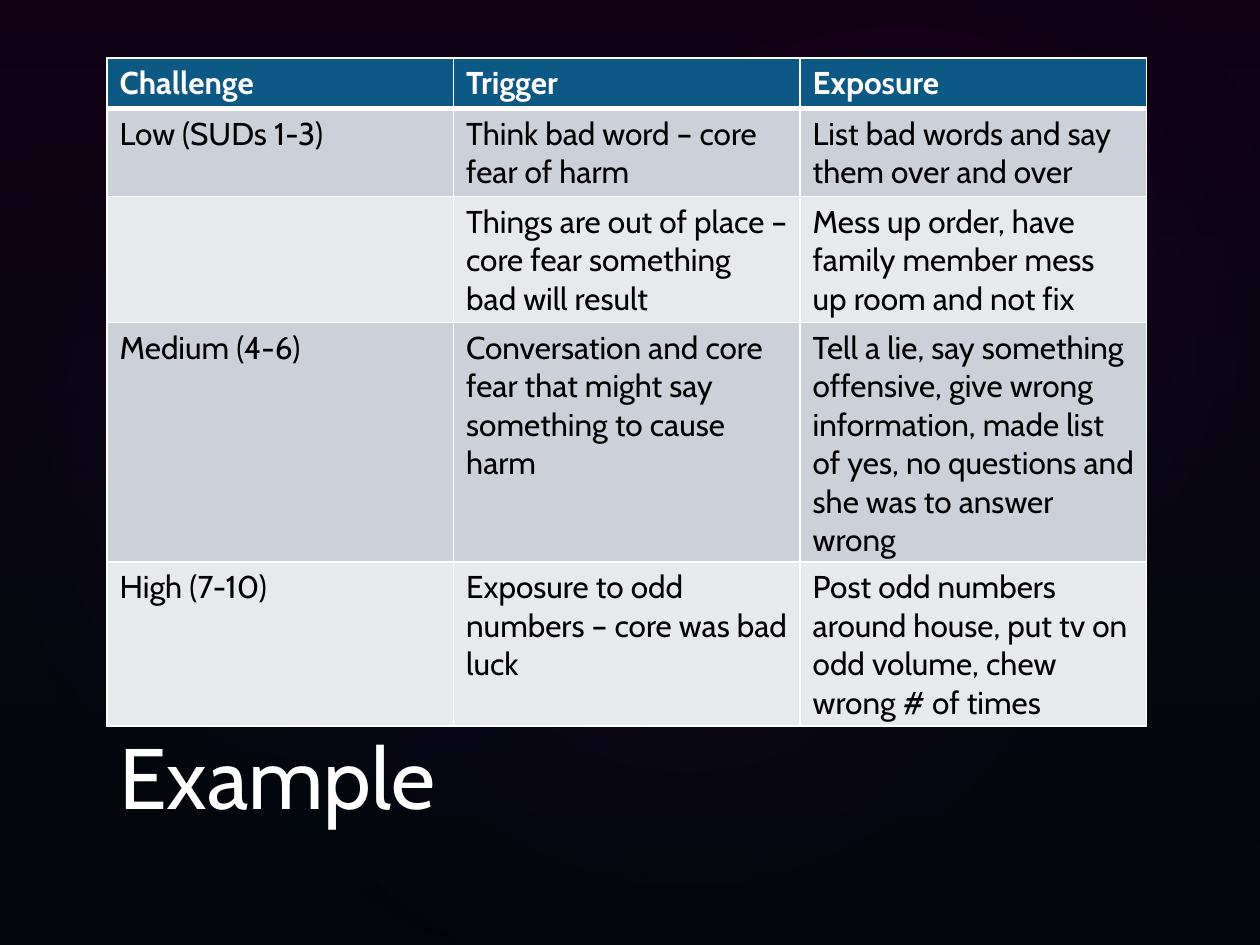
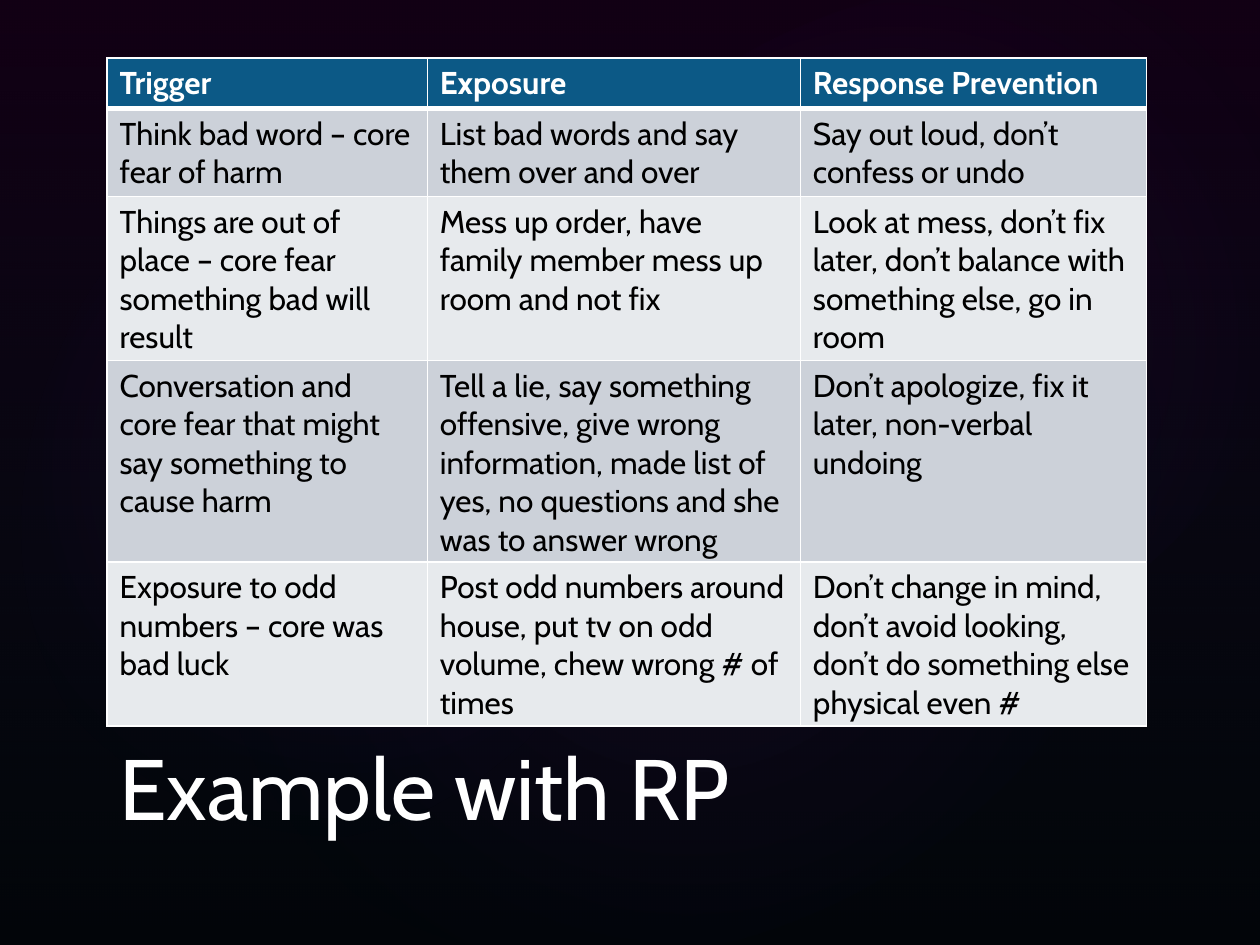
import dataclasses

import lxml.etree
import pptx
import pptx.dml.color
import pptx.enum.shapes
import pptx.enum.text
import pptx.oxml.ns
import pptx.util

# Content: triggers and exposures appear in both tables
CHALLENGES = ("Challenge", "Low (SUDs 1-3)", "", "Medium (4-6)", "High (7-10)")
TRIGGERS = (
    "Trigger",
    "Think bad word – core fear of harm",
    "Things are out of place – core fear something bad will result",
    "Conversation and core fear that might say something to cause harm",
    "Exposure to odd numbers – core was bad luck",
)
EXPOSURES = (
    "Exposure",
    "List bad words and say them over and over",
    "Mess up order, have family member mess up room and not fix",
    "Tell a lie, say something offensive, give wrong information, "
    "made list of yes, no questions and she was to answer wrong",
    "Post odd numbers around house, put tv on odd volume, chew wrong # of times",
)
RESPONSES = (
    "Response Prevention",
    "Say out loud, don’t confess or undo",
    "Look at mess, don’t fix later, don’t balance with something else, go in room",
    "Don’t apologize, fix it later, non-verbal undoing",
    "Don’t change in mind, don’t avoid looking, "
    "don’t do something else physical even #",
)
PAGES = (
    {"title": "Example", "title_top": 5.56,
     "columns": (CHALLENGES, TRIGGERS, EXPOSURES), "shares": (1 / 3, 1 / 3, 1 / 3)},
    {"title": "Example with RP", "title_top": 5.65,
     "columns": (TRIGGERS, EXPOSURES, RESPONSES), "shares": (0.308, 0.359, 0.333)},
)


@dataclasses.dataclass(frozen=True)
class Theme:
    font: str = "Cabin"
    title_size: int = 49
    table_size: int = 18
    backdrop: str = "000000"
    light: str = "FFFFFF"
    dark: str = "000000"
    header: str = "0C5986"
    bands: tuple = ("CCD1D9", "E7EAED")
    purple: str = "33003A"
    navy: str = "1B3861"
    glow: str = "E113FF"


THEME = Theme()

# Layout in inches
WIDTH, HEIGHT = 10, 7.5
LEFT, TABLE_TOP, CONTENT_WIDTH = 0.85, 0.46, 8.25
TITLE_HEIGHT = 1
ROW_HEIGHTS = (0.39, 0.67, 0.95, 1.52, 1.24)
# Left, top, width, height, rotation, opacity in percent
GLOWS = (
    (1.5, 1.14, 7.92, 6.24, 328.7, 7),
    (-0.3, 1.28, 6.06, 4.9, 294.3, 8),
    (3.58, 0.13, 7.09, 5.2, 328.7, 8),
)
SHAPES = pptx.enum.shapes.MSO_SHAPE


def rgb(code):
    return pptx.dml.color.RGBColor.from_string(code)


def inches(*values):
    return [pptx.util.Inches(value) for value in values]


def add_node(parent, tag, **attributes):
    node = lxml.etree.SubElement(parent, pptx.oxml.ns.qn(tag))
    for name, value in attributes.items():
        node.set(name, str(value))
    return node


def write(para, text, *, size, color, bold=False):
    span = para.add_run()
    span.text = text
    span.font.name = THEME.font
    span.font.size = pptx.util.Pt(size)
    span.font.bold = bold
    span.font.color.rgb = rgb(color)


# Backdrop: one veil and three soft glows
def add_haze(page, kind, place, stops, radial=False):
    shape = page.shapes.add_shape(kind, *inches(*place))
    shape.shadow.inherit = False
    shape.line.fill.background()
    shape.fill.background()
    properties = shape._element.spPr
    blank = properties.find(pptx.oxml.ns.qn("a:noFill"))
    gradient = add_node(properties, "a:gradFill", rotWithShape=1)
    stop_list = add_node(gradient, "a:gsLst")
    for position, color, opacity in stops:
        stop = add_node(stop_list, "a:gs", pos=position * 1000)
        tint = add_node(stop, "a:srgbClr", val=color)
        add_node(tint, "a:alpha", val=opacity * 1000)
    if radial:
        focus = add_node(gradient, "a:path", path="circle")
        add_node(focus, "a:fillToRect", l=50000, t=50000, r=50000, b=50000)
    else:
        add_node(gradient, "a:lin", ang=90 * 60000, scaled=0)
    properties.replace(blank, gradient)
    return shape


def add_backdrop(page):
    page.background.fill.solid()
    page.background.fill.fore_color.rgb = rgb(THEME.backdrop)
    add_haze(page, SHAPES.RECTANGLE, (0, 0, WIDTH, HEIGHT),
             ((0, THEME.purple, 36), (100, THEME.navy, 10)))
    for *place, rotation, opacity in GLOWS:
        glow = add_haze(page, SHAPES.OVAL, place,
                        ((0, THEME.glow, opacity), (58, THEME.navy, 0)), radial=True)
        glow.rotation = rotation


def add_title(page, text, top):
    box = page.shapes.add_textbox(*inches(LEFT, top, CONTENT_WIDTH, TITLE_HEIGHT))
    frame = box.text_frame
    frame.word_wrap = True
    frame.margin_bottom = 0
    frame.vertical_anchor = pptx.enum.text.MSO_ANCHOR.BOTTOM
    write(frame.paragraphs[0], text, size=THEME.title_size, color=THEME.light)


# Table
def add_borders(cell, header_line_above, header_line_below):
    properties = cell._tc.get_or_add_tcPr()
    widths = {"L": 1, "R": 1, "T": 3 if header_line_above else 1,
              "B": 3 if header_line_below else 1}
    for index, (side, width) in enumerate(widths.items()):
        line = add_node(properties, f"a:ln{side}", w=pptx.util.Pt(width))
        add_node(add_node(line, "a:solidFill"), "a:srgbClr", val=THEME.light)
        properties.insert(index, line)


def add_table(page, columns, shares):
    place = inches(LEFT, TABLE_TOP, CONTENT_WIDTH, sum(ROW_HEIGHTS))
    table = page.shapes.add_table(len(ROW_HEIGHTS), len(columns), *place).table
    for row, height in zip(table.rows, ROW_HEIGHTS):
        row.height = pptx.util.Inches(height)
    for column_index, (texts, share) in enumerate(zip(columns, shares)):
        table.columns[column_index].width = pptx.util.Inches(CONTENT_WIDTH * share)
        for row_index, text in enumerate(texts):
            cell = table.cell(row_index, column_index)
            is_header = row_index == 0
            cell.fill.solid()
            cell.fill.fore_color.rgb = rgb(
                THEME.header if is_header else THEME.bands[(row_index - 1) % 2])
            add_borders(cell, row_index == 1, is_header)
            if text:
                write(cell.text_frame.paragraphs[0], text, size=THEME.table_size,
                      color=THEME.light if is_header else THEME.dark, bold=is_header)


def main():
    deck = pptx.Presentation()
    deck.slide_width, deck.slide_height = inches(WIDTH, HEIGHT)
    for content in PAGES:
        page = deck.slides.add_slide(deck.slide_layouts[6])
        add_backdrop(page)
        add_title(page, content["title"], content["title_top"])
        add_table(page, content["columns"], content["shares"])
    deck.save("out.pptx")


if __name__ == "__main__":
    main()
